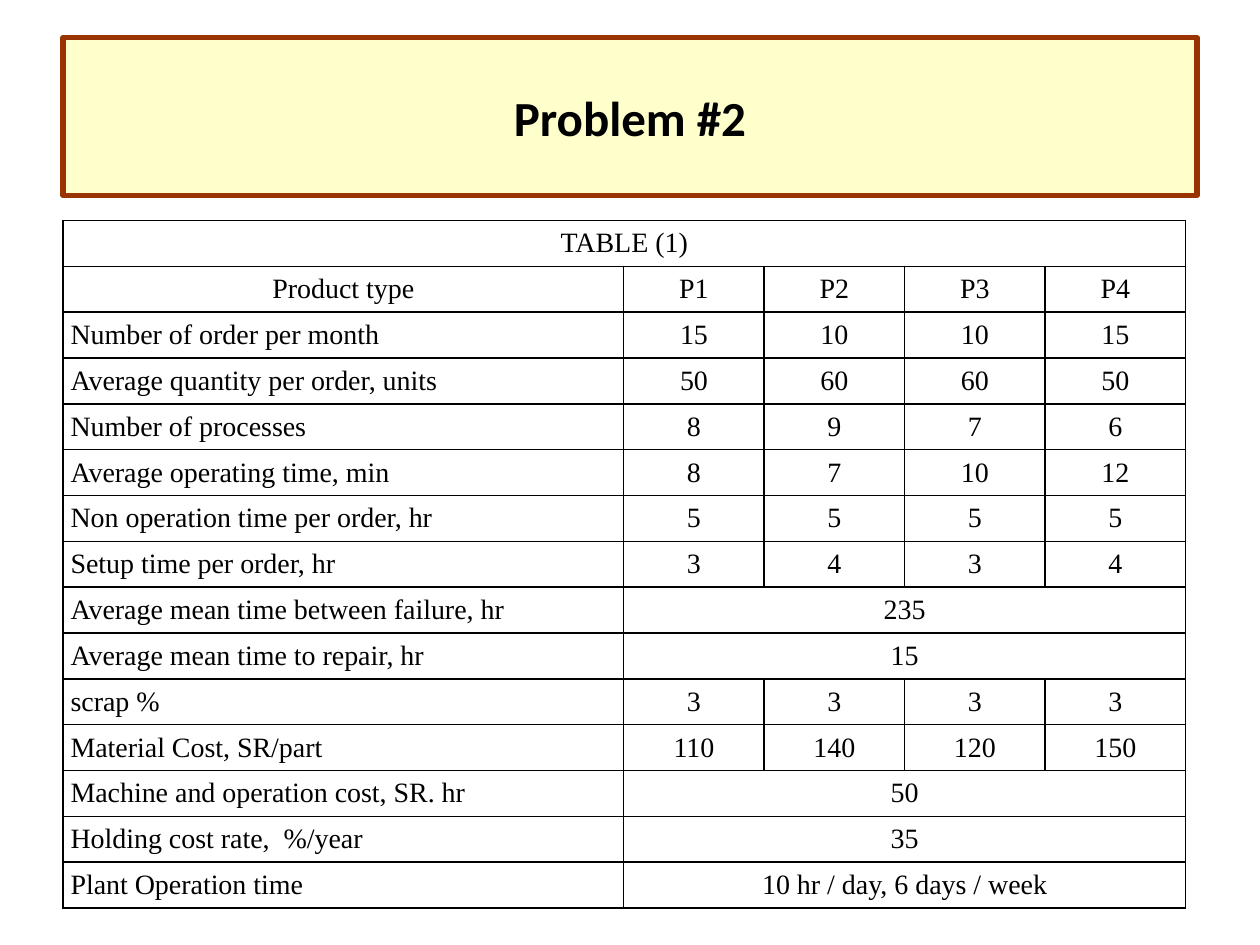
import dataclasses

import lxml.etree
import pptx
import pptx.dml.color
import pptx.enum.shapes
import pptx.enum.text
import pptx.oxml.ns
import pptx.util

Inches = pptx.util.Inches
Pt = pptx.util.Pt
RGBColor = pptx.dml.color.RGBColor
CENTER = pptx.enum.text.PP_ALIGN.CENTER
LEFT = pptx.enum.text.PP_ALIGN.LEFT
MIDDLE = pptx.enum.text.MSO_ANCHOR.MIDDLE


@dataclasses.dataclass(frozen=True)
class Theme:
    text: str = "000000"
    banner_fill: str = "FFFFCC"
    banner_line: str = "993300"
    banner_line_width: float = 3
    table_line: str = "000000"
    table_line_width: float = 1
    title_font: str = "Calibri"
    title_size: float = 28
    table_font: str = "Times New Roman"
    table_size: float = 16


@dataclasses.dataclass(frozen=True)
class Row:
    """One table row; the last entry spans all columns left over."""
    label: str
    values: tuple[str, ...] = ()
    centered: bool = False


THEME = Theme()
LEFT_EDGE = Inches(0.5)
LABEL_INDENT = Inches(0.06)
ROW_HEIGHT = Inches(0.364)
COLUMN_WIDTHS = [Inches(4.45)] + [Inches(1.115)] * 4

ROWS = (
    Row("TABLE (1)", centered=True),
    Row("Product type", ("P1", "P2", "P3", "P4"), centered=True),
    Row("Number of order per month", ("15", "10", "10", "15")),
    Row("Average quantity per order, units", ("50", "60", "60", "50")),
    Row("Number of processes", ("8", "9", "7", "6")),
    Row("Average operating time, min", ("8", "7", "10", "12")),
    Row("Non operation time per order, hr", ("5", "5", "5", "5")),
    Row("Setup time per order, hr", ("3", "4", "3", "4")),
    Row("Average mean time between failure, hr", ("235",)),
    Row("Average mean time to repair, hr", ("15",)),
    Row("scrap %", ("3", "3", "3", "3")),
    Row("Material Cost, SR/part", ("110", "140", "120", "150")),
    Row("Machine and operation cost, SR. hr", ("50",)),
    Row("Holding cost rate,  %/year", ("35",)),
    Row("Plant Operation time", ("10 hr / day, 6 days / week",)),
)


def write_text(text_frame, text: str, font_name: str, size: float,
               alignment=CENTER, bold: bool = False) -> None:
    paragraph = text_frame.paragraphs[0]
    paragraph.alignment = alignment
    run = paragraph.add_run()
    run.text = text
    run.font.name = font_name
    run.font.size = Pt(size)
    run.font.bold = bold
    run.font.color.rgb = RGBColor.from_string(THEME.text)


def format_cell(cell) -> None:
    """Give a cell thin borders, no fill and no margins."""
    qn = pptx.oxml.ns.qn
    properties = cell._tc.get_or_add_tcPr()
    for side in ("a:lnL", "a:lnR", "a:lnT", "a:lnB"):
        line = lxml.etree.SubElement(properties, qn(side),
                                     w=str(Pt(THEME.table_line_width)))
        fill = lxml.etree.SubElement(line, qn("a:solidFill"))
        lxml.etree.SubElement(fill, qn("a:srgbClr"), val=THEME.table_line)
    cell.fill.background()
    cell.margin_left = cell.margin_right = 0
    cell.margin_top = cell.margin_bottom = 0
    cell.vertical_anchor = MIDDLE


def add_table(slide, rows: tuple[Row, ...]) -> None:
    table = slide.shapes.add_table(
        len(rows), len(COLUMN_WIDTHS), LEFT_EDGE, Inches(1.75),
        sum(COLUMN_WIDTHS), ROW_HEIGHT * len(rows)).table
    table.first_row = False
    table.horz_banding = False
    for column, width in zip(table.columns, COLUMN_WIDTHS):
        column.width = width
    for cell in table.iter_cells():
        format_cell(cell)

    last_column = len(COLUMN_WIDTHS) - 1
    for row_index, row in enumerate(rows):
        table.rows[row_index].height = ROW_HEIGHT
        entries = (row.label, *row.values)
        for column_index, text in enumerate(entries):
            cell = table.cell(row_index, column_index)
            is_left = column_index == 0 and not row.centered
            if is_left:
                cell.margin_left = LABEL_INDENT
            write_text(cell.text_frame, text, THEME.table_font,
                       THEME.table_size, LEFT if is_left else CENTER)
        if len(entries) <= last_column:
            start = table.cell(row_index, len(entries) - 1)
            start.merge(table.cell(row_index, last_column))


def add_banner(slide, title: str) -> None:
    banner = slide.shapes.add_shape(
        pptx.enum.shapes.MSO_SHAPE.RECTANGLE,
        LEFT_EDGE, Inches(0.3), Inches(9), Inches(1.25))
    banner.shadow.inherit = False
    banner.fill.solid()
    banner.fill.fore_color.rgb = RGBColor.from_string(THEME.banner_fill)
    banner.line.color.rgb = RGBColor.from_string(THEME.banner_line)
    banner.line.width = Pt(THEME.banner_line_width)
    # Rounded line corners
    lxml.etree.SubElement(banner.line._get_or_add_ln(),
                          pptx.oxml.ns.qn("a:round"))
    banner.text_frame.word_wrap = True
    banner.text_frame.vertical_anchor = MIDDLE
    write_text(banner.text_frame, title, THEME.title_font,
               THEME.title_size, bold=True)


def main() -> None:
    presentation = pptx.Presentation()
    presentation.slide_width = Inches(10)
    presentation.slide_height = Inches(7.5)
    slide = presentation.slides.add_slide(presentation.slide_layouts[6])
    add_table(slide, ROWS)
    add_banner(slide, "Problem #2")
    presentation.save("out.pptx")


if __name__ == "__main__":
    main()
